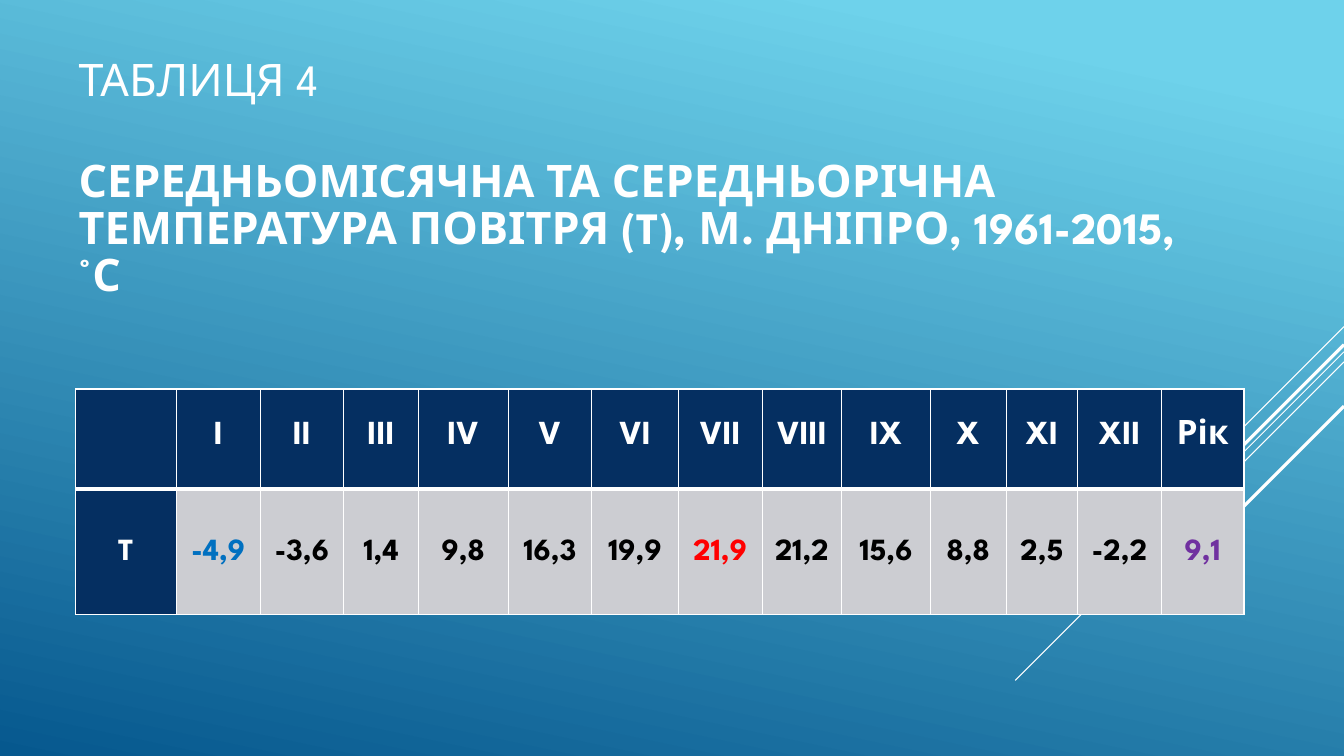
from dataclasses import dataclass

from lxml.etree import SubElement
from pptx import Presentation
from pptx.dml.color import RGBColor as Rgb
from pptx.enum.shapes import MSO_CONNECTOR as Connector
from pptx.enum.text import MSO_ANCHOR as Anchor, MSO_AUTO_SIZE as AutoSize, PP_ALIGN as Align
from pptx.oxml import parse_xml
from pptx.oxml.ns import nsdecls, qn
from pptx.util import Pt

PX = 9144


@dataclass(frozen=True)
class Theme:
    """Colours, font and type sizes of the deck."""
    font: str = "League Spartan"
    white: str = "FFFFFF"
    black: str = "000000"
    sky: str = "6ED2EB"
    deep: str = "06588E"
    navy: str = "052F61"
    grey: str = "CCCDD2"
    cold: str = "0070C0"
    hot: str = "FF0000"
    yearly: str = "7030A0"
    title_size: int = 32
    head_size: int = 24
    value_size: int = 22


THEME = Theme()
MONTHS = ["I", "II", "III", "IV", "V", "VI", "VII", "VIII", "IX", "X", "XI", "XII", "Рік"]
VALUES = ["-4,9", "-3,6", "1,4", "9,8", "16,3", "19,9", "21,9",
          "21,2", "15,6", "8,8", "2,5", "-2,2", "9,1"]
ACCENTS = {"I": THEME.cold, "VII": THEME.hot, "Рік": THEME.yearly}
COLUMNS = [100, 83, 83, 74, 89, 83, 86, 83, 79, 88, 75, 71, 83, 82]
ROWS = [99, 125]
RAYS = [(324, 100, 0.75), (349, 326, 0.75), (359, 207, 0.75), (342, 191, 2.25), (403, 139, 2.25)]


def write(para, text, *, size, color=THEME.white, bold=False, align=Align.LEFT, spacing=1.0):
    """Put formatted text into a paragraph; a line feed becomes a line break."""
    para.text = text.replace("\n", "\v")
    para.alignment = align
    para.line_spacing = spacing
    for span in para.runs:
        span.font.name = THEME.font
        span.font.size = Pt(size)
        span.font.bold = bold
        span.font.color.rgb = Rgb.from_string(color)


def paint_background(page):
    """Fill the page with the slanted blue gradient."""
    fill = page.background.fill
    fill.gradient()
    fill.gradient_angle = 258
    stops = ((0.1, THEME.sky), (1, THEME.deep))
    for stop, (position, color) in zip(fill.gradient_stops, stops):
        stop.position = position
        stop.color.rgb = Rgb.from_string(color)


def draw_rays(page, right):
    """Draw the diagonal rays that run down and left from the right edge."""
    for top, reach, width in RAYS:
        ends = (right, top, right - reach, top + reach)
        ray = page.shapes.add_connector(Connector.STRAIGHT, *(end * PX for end in ends))
        ray.line.color.rgb = Rgb.from_string(THEME.white)
        ray.line.width = Pt(width)
        SubElement(ray._element.spPr, qn("a:effectLst"))


def fill_title(page, left, top, width, height):
    """Place the table number and its heading in the title placeholder."""
    title = page.shapes.title
    title.left, title.top, title.width, title.height = (
        side * PX for side in (left, top, width, height))
    frame = title.text_frame
    frame.word_wrap = True
    frame.auto_size = AutoSize.NONE
    frame.vertical_anchor = Anchor.MIDDLE
    frame.margin_bottom = 58 * PX
    number, heading = frame.paragraphs[0], frame.add_paragraph()
    style = {"size": THEME.title_size, "spacing": 0.88}
    write(number, "ТАБЛИЦЯ 4", **style)
    write(heading, "СЕРЕДНЬОМІСЯЧНА ТА СЕРЕДНЬОРІЧНА\n"
          "ТЕМПЕРАТУРА ПОВІТРЯ (T), М. ДНІПРО, 1961-2015, °С", bold=True, **style)
    number.space_after = Pt(38.4)
    heading.space_before = number.space_before = Pt(0)


def dress_cell(cell, color, widths):
    """Fill a cell and rule its left, right, top and bottom borders."""
    cell.fill.solid()
    cell.fill.fore_color.rgb = Rgb.from_string(color)
    cell.vertical_anchor = Anchor.MIDDLE
    cell.margin_left = cell.margin_right = 7 * PX
    cell.margin_top = cell.margin_bottom = 0
    properties = cell._tc.get_or_add_tcPr()
    for index, (side, width) in enumerate(zip("LRTB", widths)):
        properties.insert(index, parse_xml(
            f'<a:ln{side} {nsdecls("a")} w="{Pt(width)}"><a:solidFill>'
            f'<a:srgbClr val="{THEME.white}"/></a:solidFill></a:ln{side}>'))


def add_climate_table(page, left, top):
    """Build the table of monthly and yearly temperatures."""
    table = page.shapes.add_table(
        len(ROWS), len(COLUMNS), left * PX, top * PX, sum(COLUMNS) * PX, sum(ROWS) * PX).table
    for column, width in zip(table.columns, COLUMNS):
        column.width = width * PX
    for row, height in zip(table.rows, ROWS):
        row.height = height * PX
    style = {"bold": True, "align": Align.CENTER, "spacing": 1.07}
    for index, (month, value) in enumerate(zip([""] + MONTHS, ["T"] + VALUES)):
        head, body = table.cell(0, index), table.cell(1, index)
        label = index == 0
        dress_cell(head, THEME.navy, (1, 1, 1, 3))
        dress_cell(body, THEME.navy if label else THEME.grey, (1, 1, 3, 1))
        head.margin_bottom = 8 * PX
        write(head.text_frame.paragraphs[0], month, size=THEME.head_size, **style)
        color = THEME.white if label else ACCENTS.get(month, THEME.black)
        write(body.text_frame.paragraphs[0], value, size=THEME.value_size, color=color, **style)


def main():
    """Build the deck and save it."""
    deck = Presentation()
    deck.slide_width, deck.slide_height = 1333 * PX, 750 * PX
    page = deck.slides.add_slide(deck.slide_layouts[5])
    paint_background(page)
    draw_rays(page, 1333)
    fill_title(page, 68, 55, 1160, 300)
    add_climate_table(page, 75, 386)
    deck.save("out.pptx")


if __name__ == "__main__":
    main()
